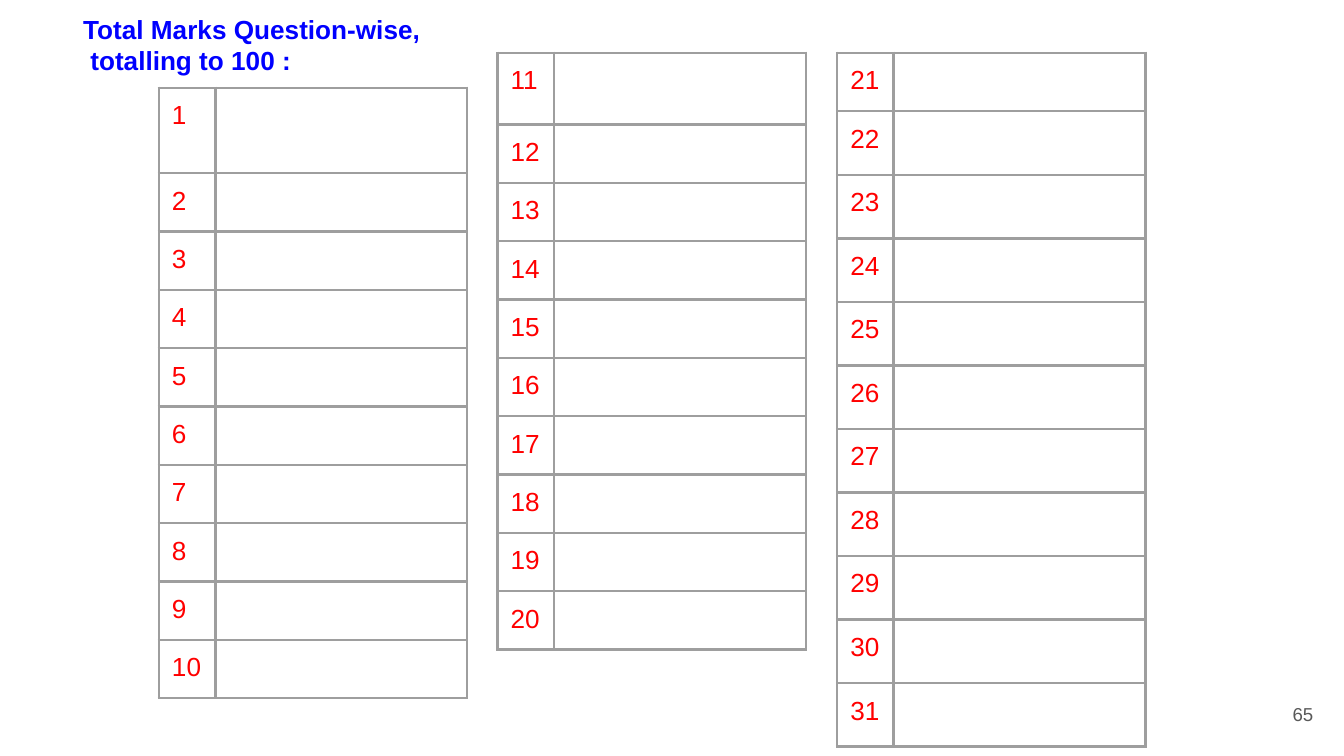
from lxml.etree import SubElement
from pptx import Presentation
from pptx.dml.color import RGBColor
from pptx.enum.text import MSO_ANCHOR, MSO_AUTO_SIZE, PP_ALIGN
from pptx.oxml.ns import qn
from pptx.util import Cm, Pt

BLUE = RGBColor(0x00, 0x00, 0xFF)
RED = RGBColor(0xFF, 0x00, 0x00)
GREY = RGBColor(0x59, 0x59, 0x59)
BORDER = RGBColor(0x9E, 0x9E, 0x9E)
INSET = Cm(0.25)
MARGINS = dict.fromkeys(
    ("margin_left", "margin_top", "margin_right", "margin_bottom"), INSET)
COLUMN_WIDTHS = (1.07, 4.76)
MARK_TABLES = (
    {"left": 3.0, "top": 1.66, "numbers": range(1, 11), "first": 1.61, "height": 1.07},
    {"left": 9.4, "top": 1.0, "numbers": range(11, 21), "first": 1.35, "height": 1.06},
    {"left": 15.82, "top": 1.0, "numbers": range(21, 32), "first": 1.09, "height": 1.2},
)


def apply_format(target, values):
    """Set each attribute named in the format values."""
    for name, value in values.items():
        setattr(target, name, value)


def write_text(frame, lines, size, color, align=PP_ALIGN.LEFT, bold=False):
    """Write one paragraph per line with a shared format."""
    for index, line in enumerate(lines):
        para = frame.paragraphs[0] if index == 0 else frame.add_paragraph()
        apply_format(para, {"alignment": align, "space_before": Pt(0)})
        span = para.add_run()
        span.text = line
        apply_format(span.font, {"name": "Arial", "size": Pt(size), "bold": bold})
        span.font.color.rgb = color


def place_text(shape, position, lines, anchor, **style):
    """Position a text shape and fill it."""
    apply_format(shape, dict(zip(("left", "top", "width", "height"), map(Cm, position))))
    apply_format(shape.text_frame, {
        "word_wrap": True, "auto_size": MSO_AUTO_SIZE.NONE,
        "vertical_anchor": anchor, **MARGINS})
    write_text(shape.text_frame, lines, **style)


def format_cell(cell):
    """Give a cell its insets, borders and empty fill."""
    apply_format(cell, MARGINS)
    properties = cell._tc.get_or_add_tcPr()
    for side in ("lnL", "lnR", "lnT", "lnB"):
        line = SubElement(properties, qn(f"a:{side}"), w=str(Pt(1.5)))
        fill = SubElement(line, qn("a:solidFill"))
        SubElement(fill, qn("a:srgbClr"), val=str(BORDER))
    cell.fill.background()


def add_mark_table(page, left, top, numbers, first, height):
    """Add a table of question numbers beside blank mark cells."""
    heights = [first] + [height] * (len(numbers) - 1)
    frame = page.shapes.add_table(
        len(numbers), len(COLUMN_WIDTHS), Cm(left), Cm(top),
        Cm(sum(COLUMN_WIDTHS)), Cm(sum(heights)))
    table = frame.table
    apply_format(table, {"first_row": False, "horz_banding": False})
    for column, width in zip(table.columns, COLUMN_WIDTHS):
        column.width = Cm(width)
    for row, row_height, number in zip(table.rows, heights, numbers):
        row.height = Cm(row_height)
        question, mark = row.cells
        format_cell(question)
        format_cell(mark)
        write_text(question.text_frame, [str(number)], 14, RED)
        blank = mark.text_frame.paragraphs[0]
        SubElement(blank._p, qn("a:endParaRPr"), sz="1400")


def main():
    """Build the marks slide."""
    deck = Presentation()
    apply_format(deck, {"slide_width": Cm(25.4), "slide_height": Cm(14.28)})
    page = deck.slides.add_slide(deck.slide_layouts[5])
    place_text(page.shapes.title, (1.32, 0, 22.76, 14.28),
               ["Total Marks Question-wise,", " totalling to 100 :"],
               MSO_ANCHOR.TOP, size=14, color=BLUE, bold=True)
    for mark_table in MARK_TABLES:
        add_mark_table(page, **mark_table)
    number_box = page.shapes.add_textbox(0, 0, 0, 0)
    place_text(number_box, (23.55, 12.95, 1.52, 1.09), ["65"],
               MSO_ANCHOR.MIDDLE, size=10, color=GREY, align=PP_ALIGN.RIGHT)
    deck.save("out.pptx")


if __name__ == "__main__":
    main()
